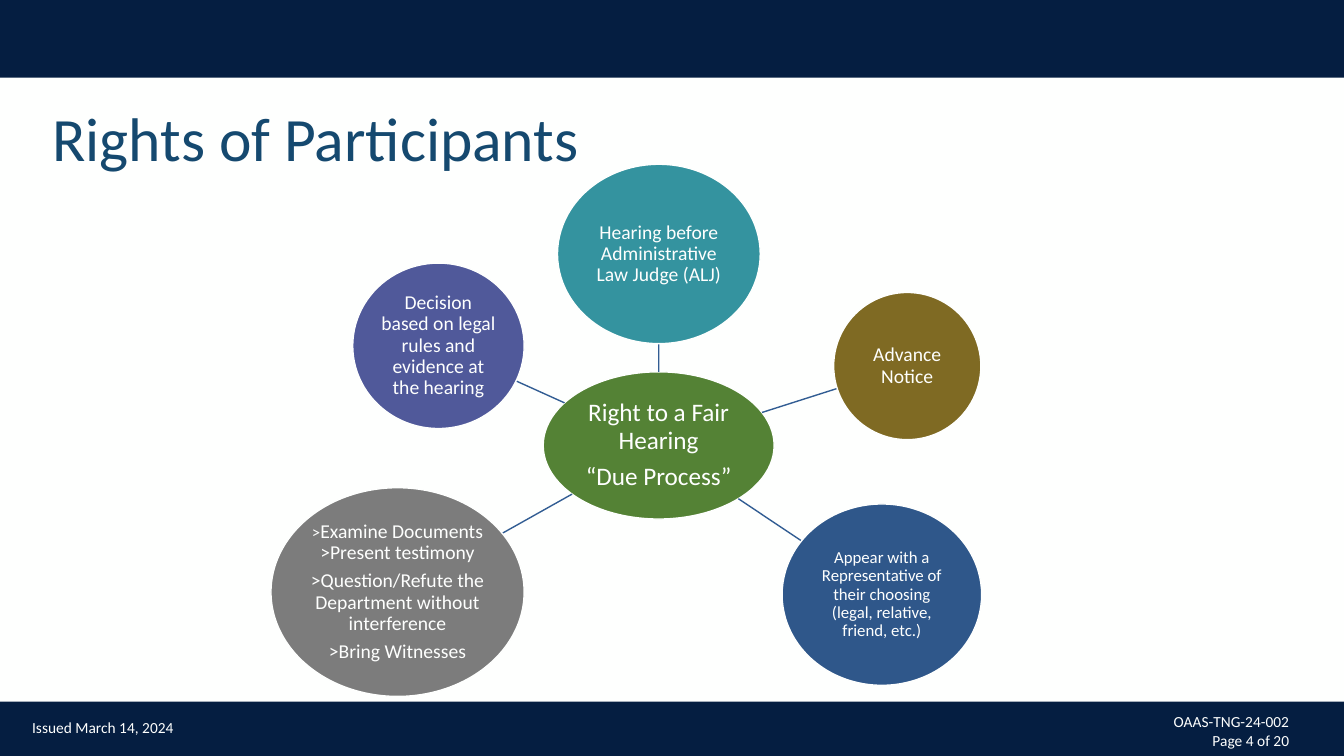
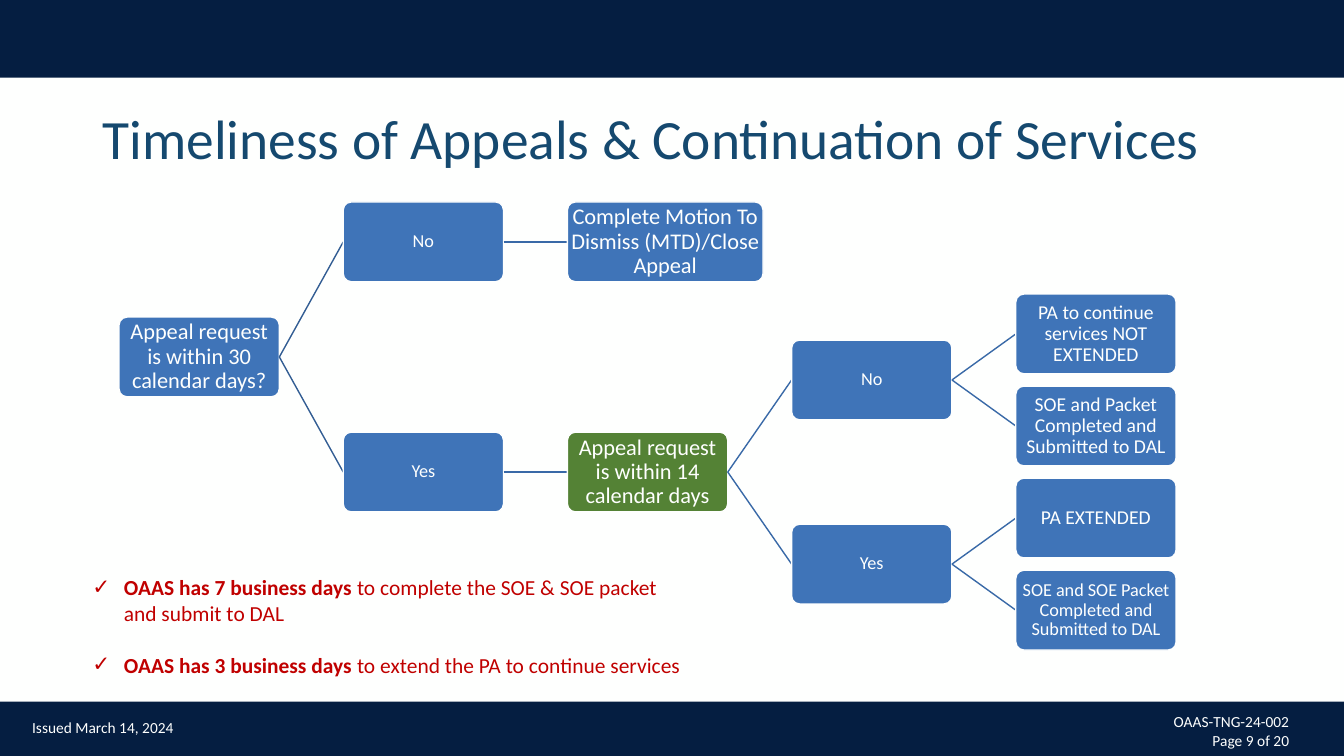
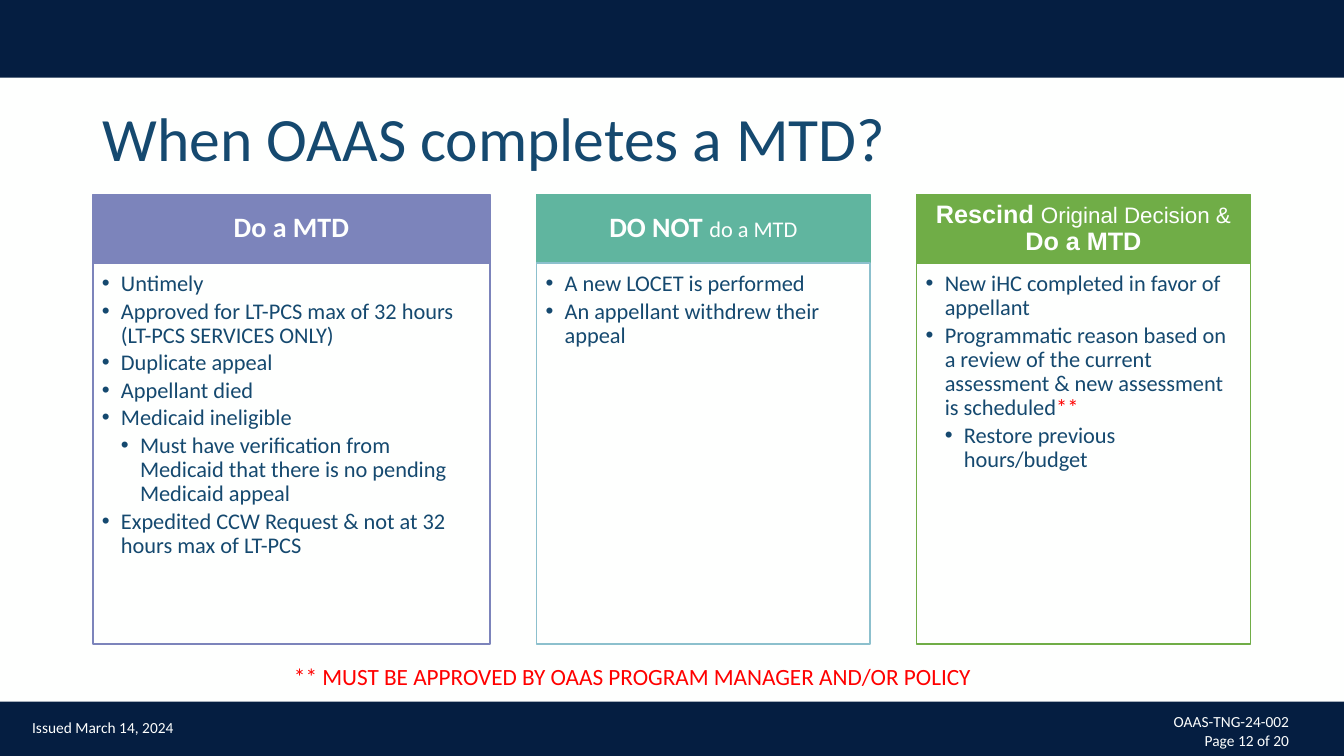
from math import hypot

from lxml.etree import SubElement
from pptx import Presentation
from pptx.dml.color import RGBColor
from pptx.enum.shapes import MSO_CONNECTOR as LINE, MSO_SHAPE as SHAPE
from pptx.enum.text import MSO_ANCHOR as ANCHOR, PP_ALIGN as ALIGN
from pptx.oxml.ns import qn
from pptx.util import Cm, Pt

COLORS = {
    "white": "FEFFFE", "navy": "051E41", "title": "15496F", "blue": "3F74B8",
    "green": "548235", "link": "325D93", "light_link": "3969A7",
    "teal": "34939F", "olive": "7F6A23", "steel": "2F578A", "gray": "7C7C7C",
    "indigo": "50599A", "dark_red": "C00000", "red": "FF0000",
    "lavender": "7C84BB", "mint": "60B59F", "sky": "8CC0CD", "leaf": "70AD47",
}
WIDTH, HEIGHT = 33.87, 19.05
TIGHT = (0.03, 0.03, 0.03, 0.03)
NORMAL = (0.25, 0.13, 0.25, 0.13)
BOLD, PLAIN = {"bold": True}, {"bold": False}

# Text, colour, size, (left, top, width, height)
HUB = (["Right to a Fair Hearing", "“Due Process”"],
       "green", 18, (13.69, 9.37, 5.82, 3.71))
RIGHTS = [
    (["Hearing before Administrative Law Judge (ALJ)"],
     "teal", 14, (14.05, 4.14, 5.11, 4.52)),
    (["Advance Notice"], "olive", 14, (21.01, 7.37, 3.71, 3.71)),
    (["Appear with a Representative of their choosing (legal, relative, "
      "friend, etc.)"], "steel", 12, (19.71, 12.7, 5.03, 4.57)),
    ([[(">", {"size": Pt(12)}), ("Examine Documents >Present testimony", {})],
      ">Question/Refute the Department without interference",
      ">Bring Witnesses"], "gray", 14, (6.83, 12.29, 6.38, 5.26)),
    (["Decision based on legal rules and evidence at the hearing"],
     "indigo", 14, (8.89, 6.63, 4.32, 4.17)),
]

# Name: (parent, column, row, text, size)
STEPS = {
    "start": (None, 0, 0.25, "Appeal request is within 30 calendar days?", 16),
    "late": ("start", 1, -1, "No", 13),
    "dismiss": ("late", 2, -1,
                "Complete Motion To Dismiss (MTD)/Close Appeal", 16),
    "timely": ("start", 1, 1.5, "Yes", 13),
    "within 14": ("timely", 2, 1.5,
                  "Appeal request is within 14 calendar days", 16),
    "after 14": ("within 14", 3, 0.5, "No", 13),
    "not extended": ("after 14", 4, 0,
                     "PA to continue services NOT EXTENDED", 14),
    "late packet": ("after 14", 4, 1,
                    "SOE and Packet Completed and Submitted to DAL", 14),
    "before 14": ("within 14", 3, 2.5, "Yes", 13),
    "extended": ("before 14", 4, 2, "PA EXTENDED", 14),
    "packet": ("before 14", 4, 3,
               "SOE and SOE Packet Completed and Submitted to DAL", 13),
}
DEADLINES = [
    [("OAAS has 7 business days ", BOLD),
     ("to complete the SOE & SOE packet and submit to DAL", {})],
    [("OAAS has 3 business days ", BOLD),
     ("to extend the PA to continue services", {})],
]

SMALL = {"size": Pt(16), **PLAIN}
ARIAL = {"name": "Arial", "size": Pt(18)}
# Items are (level, text)
CARDS = [
    {"width": 10.01, "fill": "lavender", "line": "lavender",
     "heading": "Do a MTD",
     "items": [
         (0, "Untimely"),
         (0, "Approved for LT-PCS max of 32 hours (LT-PCS SERVICES ONLY)"),
         (0, "Duplicate appeal"),
         (0, "Appellant died"),
         (0, "Medicaid ineligible"),
         (1, "Must have verification from Medicaid that there is no pending "
             "Medicaid appeal"),
         (0, "Expedited CCW Request & not at 32 hours max of LT-PCS")]},
    {"width": 8.41, "fill": "mint", "line": "sky",
     "heading": [("DO NOT ", {}), ("do a MTD", SMALL)],
     "items": [
         (0, "A new LOCET is performed"),
         (0, "An appellant withdrew their appeal")]},
    {"width": 8.41, "fill": "leaf", "line": "leaf",
     "heading": [("Rescind ", ARIAL),
                 ("Original Decision & ", {**ARIAL, **SMALL}),
                 ("Do a MTD", ARIAL)],
     "items": [
         (0, "New iHC completed in favor of appellant"),
         (0, [("Programmatic reason based on a review of the current "
               "assessment & new assessment is scheduled", {}),
              ("**", {"color": "red"})]),
         (1, "Restore previous hours/budget")]},
]


def rgb(color):
    return RGBColor.from_string(COLORS[color])


def add_bullet(para, mark, indent, level):
    props = para._p.get_or_add_pPr()
    props.set("marL", str(Cm(indent * (level + 1))))
    props.set("indent", str(-Cm(indent)))
    SubElement(props, qn("a:buFont")).set("typeface", "Arial")
    SubElement(props, qn("a:buChar")).set("char", mark)


def write(box, paras, size, color="white", align=ALIGN.LEFT,
          anchor=ANCHOR.MIDDLE, insets=NORMAL, spacing=0.9, gap=0,
          bullet=None, indent=0, levels=None, bold=False):
    """Fill a shape; a paragraph is a string or a list of (text, format)."""
    frame = box.text_frame
    sides = ("margin_left", "margin_top", "margin_right", "margin_bottom")
    settings = {"word_wrap": True, "vertical_anchor": anchor,
                **{side: Cm(inset) for side, inset in zip(sides, insets)}}
    for name, value in settings.items():
        setattr(frame, name, value)
    base = {"name": "Calibri", "size": Pt(size), "bold": bold, "color": color}
    for index, spans in enumerate(paras):
        para = frame.add_paragraph() if index else frame.paragraphs[0]
        para.alignment, para.line_spacing = align, spacing
        if index and gap:
            para.space_before = Pt(gap)
        if bullet:
            add_bullet(para, bullet, indent, levels[index] if levels else 0)
        for text, extra in [(spans, {})] if isinstance(spans, str) else spans:
            span = para.add_run()
            span.text = text
            for name, value in {**base, **extra}.items():
                if name == "color":
                    span.font.color.rgb = rgb(value)
                else:
                    setattr(span.font, name, value)


def add_shape(page, kind, area, fill, line=None):
    shape = page.shapes.add_shape(kind, *map(Cm, area))
    shape.shadow.inherit = False
    shape.fill.solid()
    shape.fill.fore_color.rgb = rgb(fill)
    if line:
        shape.line.color.rgb = rgb(line)
        shape.line.width = Pt(1)
    else:
        shape.line.fill.background()
    return shape


def add_text(page, area, paras, size, **options):
    write(page.shapes.add_textbox(*map(Cm, area)), paras, size, **options)


def add_line(page, start, end, color):
    line = page.shapes.add_connector(LINE.STRAIGHT, *map(Cm, start + end))
    line.line.color.rgb = rgb(color)
    line.line.width = Pt(1)
    SubElement(line._element.spPr, qn("a:effectLst"))


def new_page(deck, title, number, left=2.34, size=44):
    """Add a slide with the shared bands, title and footer."""
    page = deck.slides.add_slide(deck.slide_layouts[6])
    page.background.fill.solid()
    page.background.fill.fore_color.rgb = rgb("white")
    for top, height in ((0, 1.96), (17.68, 1.37)):
        add_shape(page, SHAPE.RECTANGLE, (0, top, WIDTH, height), "navy")
    add_text(page, (left, 2.03, 31.55 - left, 3.05), [title], size,
             color="title")
    add_text(page, (0.56, 18.14, 4.62, 0.56), ["Issued March 14, 2024"], 11,
             anchor=ANCHOR.BOTTOM, spacing=1)
    add_text(page, (28.68, 17.91, 4.06, 1.02),
             ["OAAS-TNG-24-002", f"Page {number} of 20"], 11,
             align=ALIGN.RIGHT, spacing=1)
    return page


def center(area):
    left, top, width, height = area
    return left + width / 2, top + height / 2


def edge_toward(area, target):
    """Point where the ellipse in area meets the line to target."""
    x, y = center(area)
    dx, dy = target[0] - x, target[1] - y
    share = 1 / hypot(dx / (area[2] / 2), dy / (area[3] / 2))
    return x + dx * share, y + dy * share


def build_rights(deck):
    page = new_page(deck, "Rights of Participants", 4, left=1.07)
    hub_area = HUB[-1]
    for paras, color, size, area in [HUB] + RIGHTS:
        if area != hub_area:
            add_line(page, edge_toward(hub_area, center(area)),
                     edge_toward(area, center(hub_area)), "link")
        oval = add_shape(page, SHAPE.OVAL, area, color, "white")
        write(oval, paras, size, align=ALIGN.CENTER, insets=TIGHT,
              gap=0.35 * size)


def build_timeliness(deck):
    page = new_page(deck, "Timeliness of Appeals & Continuation of Services",
                    9, size=39.6)
    areas = {}
    for name, (parent, column, row, text, size) in STEPS.items():
        width = 4.93 if name == "dismiss" else 4.04
        area = (3 + 5.65 * column, 7.41 + 2.32 * row, width, 2.01)
        areas[name] = area
        if parent:
            source = areas[parent]
            add_line(page, (source[0] + source[2], center(source)[1]),
                     (area[0], center(area)[1]),
                     "link" if parent == "start" else "light_link")
        fill = "green" if name == "within 14" else "blue"
        box = add_shape(page, SHAPE.ROUNDED_RECTANGLE, area, fill, "white")
        box.adjustments[0] = 0.1
        write(box, [text], size, align=ALIGN.CENTER, insets=TIGHT)
    add_text(page, (2.08, 14.15, 15.52, 3.05), DEADLINES, 15.3,
             color="dark_red", anchor=ANCHOR.BOTTOM, spacing=1, gap=18.6,
             bullet="✓", indent=0.79)


def build_dismissals(deck):
    page = new_page(deck, "When OAAS completes a MTD?", 12)
    left, top, head_height, body_height, gutter = 2.34, 4.9, 1.73, 9.6, 1.17
    for card in CARDS:
        width = card["width"]
        head = add_shape(page, SHAPE.RECTANGLE,
                         (left, top, width, head_height),
                         card["fill"], card["fill"])
        write(head, [card["heading"]], 20, align=ALIGN.CENTER, bold=True,
              insets=(0.38, 0.2, 0.38, 0.2))
        body = add_shape(page, SHAPE.RECTANGLE,
                         (left, top + head_height, width, body_height),
                         "white", card["line"])
        levels, paras = zip(*card["items"])
        write(body, paras, 16, color="title", anchor=ANCHOR.TOP, gap=2.4,
              insets=(0.23, 0.23, 0.3, 0.36), bullet="•", indent=0.48,
              levels=levels)
        left += width + gutter
    add_text(page, (7.16, 16.1, 18.36, 1.42),
             ["** MUST BE APPROVED BY OAAS PROGRAM MANAGER AND/OR POLICY"],
             16.6, color="red", anchor=ANCHOR.BOTTOM, spacing=1)


def main():
    deck = Presentation()
    deck.slide_width, deck.slide_height = Cm(WIDTH), Cm(HEIGHT)
    build_rights(deck)
    build_timeliness(deck)
    build_dismissals(deck)
    deck.save("out.pptx")


if __name__ == "__main__":
    main()
